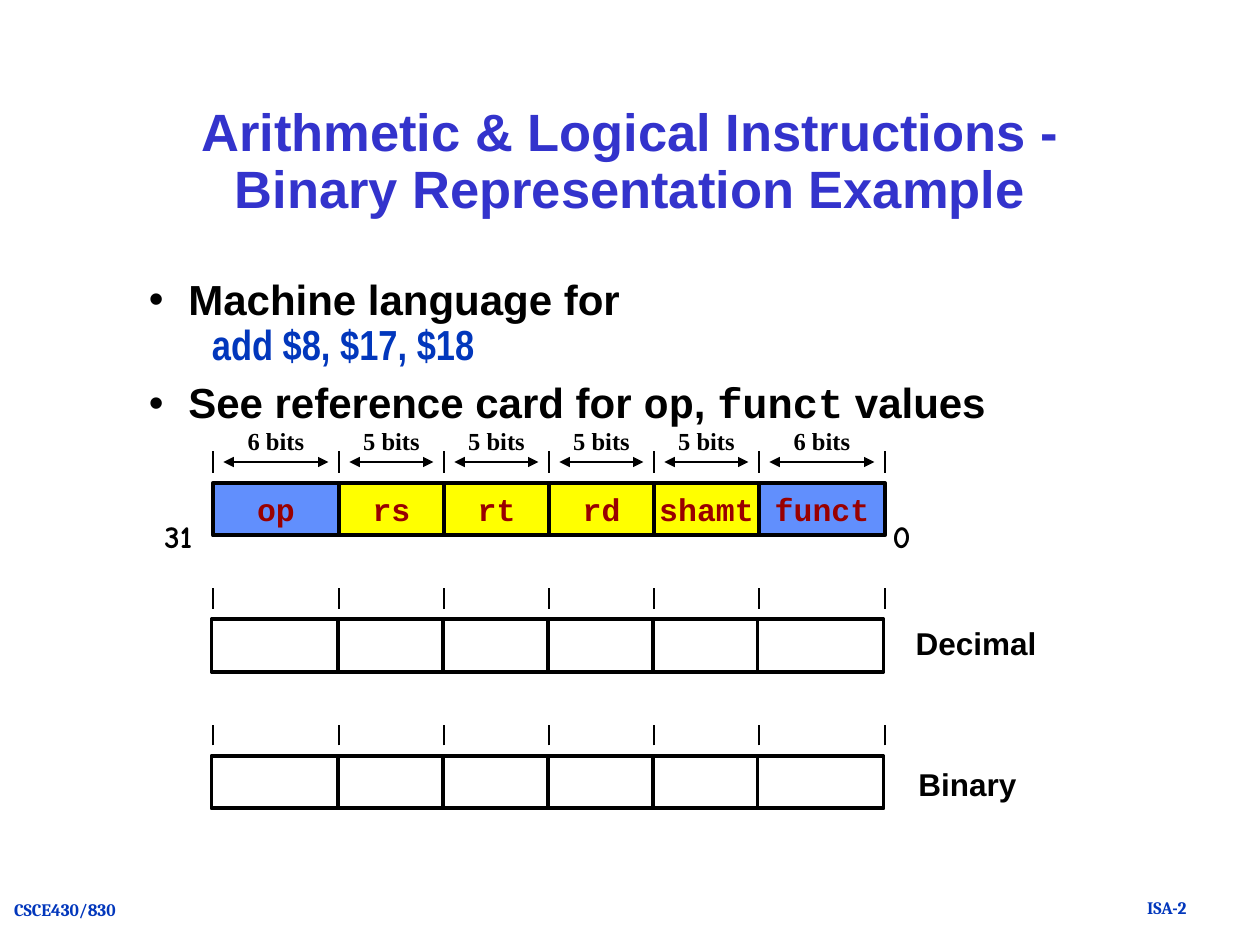
from itertools import accumulate

from lxml import etree
from pptx import Presentation
from pptx.dml.color import RGBColor
from pptx.enum.shapes import MSO_CONNECTOR as Connector, MSO_SHAPE as Shape
from pptx.enum.text import MSO_ANCHOR as Anchor, PP_ALIGN as Align
from pptx.oxml.ns import qn
from pptx.util import Pt

COLORS = {
    "black": "000000",
    "white": "FFFFFF",
    "title": "3333CC",
    "accent": "0237BC",
    "code": "990000",
    "blue": "618FFD",
    "yellow": "FFFF00",
}
# Field name, width in bits, fill
FIELDS = [
    ("op", 6, "blue"),
    ("rs", 5, "yellow"),
    ("rt", 5, "yellow"),
    ("rd", 5, "yellow"),
    ("shamt", 5, "yellow"),
    ("funct", 6, "blue"),
]
BIT_WIDTH = 12
EDGES = list(accumulate((bits * BIT_WIDTH for _, bits, _ in FIELDS), initial=0))
ROW_HEIGHT = 30
ROW_PITCH = 78


def color(name):
    return RGBColor.from_string(COLORS[name])


def style(run, font_name, size, color_name="black"):
    run.font.name = font_name
    run.font.size = Pt(size)
    run.font.bold = True
    run.font.color.rgb = color(color_name)


def add_text(slide, box, text, font_name, size, color_name="black",
             align=Align.CENTER, wrap=False):
    shape = slide.shapes.add_textbox(*map(Pt, box))
    frame = shape.text_frame
    frame.word_wrap = wrap
    frame.text = text
    paragraph = frame.paragraphs[0]
    paragraph.alignment = align
    for run in paragraph.runs:
        style(run, font_name, size, color_name)
    return shape


def add_line(slide, x1, y1, x2, y2, arrows=False):
    line = slide.shapes.add_connector(Connector.STRAIGHT, Pt(x1), Pt(y1), Pt(x2), Pt(y2))
    line.line.color.rgb = color("black")
    line.line.width = Pt(1)
    if arrows:
        outline = line.line._get_or_add_ln()
        for end in ("a:headEnd", "a:tailEnd"):
            etree.SubElement(outline, qn(end), type="triangle")
    etree.SubElement(line._element.spPr, qn("a:effectLst"))


def add_title(slide, box):
    shape = add_text(slide, box, "Arithmetic & Logical Instructions -\vBinary Representation Example",
                     "Arial", 30, "title", wrap=True)
    shape.text_frame.vertical_anchor = Anchor.MIDDLE
    shape.text_frame.paragraphs[0].line_spacing = 0.9


def add_bullets(slide, box):
    frame = slide.shapes.add_textbox(*map(Pt, box)).text_frame
    frame.word_wrap = True
    bullets = [
        [("Machine language for ", "Arial", "black"), None,
         ("\t", "Arial", "black"), ("add $8, $17, $18", "Arial Narrow", "accent")],
        [("See reference card for ", "Arial", "black"), ("op", "Courier New", "black"),
         (", ", "Arial", "black"), ("funct", "Courier New", "black"),
         (" values", "Arial", "black")],
    ]
    for index, parts in enumerate(bullets):
        paragraph = frame.add_paragraph() if index else frame.paragraphs[0]
        paragraph.line_spacing = 0.9
        paragraph.space_before = Pt(7.2)
        properties = paragraph._p.get_or_add_pPr()
        properties.set("marL", str(Pt(22.5)))
        properties.set("indent", str(Pt(-22.5)))
        etree.SubElement(properties, qn("a:buFont"), typeface="Arial")
        etree.SubElement(properties, qn("a:buChar"), char="•")
        for part in parts:
            if part is None:
                paragraph.add_line_break()
                continue
            text, font_name, color_name = part
            run = paragraph.add_run()
            run.text = text
            style(run, font_name, 24, color_name)


def add_ticks(slide, left, top):
    for edge in EDGES:
        add_line(slide, left + edge, top + 12, left + edge, top)


def add_cells(slide, left, top, filled):
    for (name, bits, fill), edge in zip(FIELDS, EDGES):
        cell = slide.shapes.add_shape(Shape.RECTANGLE, Pt(left + edge), Pt(top),
                                      Pt(bits * BIT_WIDTH), Pt(ROW_HEIGHT))
        cell.shadow.inherit = False
        cell.fill.solid()
        cell.fill.fore_color.rgb = color(fill if filled else "white")
        cell.line.color.rgb = color("black")
        cell.line.width = Pt(2.25)
        if filled:
            frame = cell.text_frame
            frame.word_wrap = False
            frame.vertical_anchor = Anchor.MIDDLE
            frame.text = name
            frame.paragraphs[0].alignment = Align.CENTER
            style(frame.paragraphs[0].runs[0], "Courier New", 18, "code")


def add_format_diagram(slide, left, top):
    # Named fields with their widths in bits
    add_cells(slide, left, top + 36, filled=True)
    add_ticks(slide, left, top + 18)
    for (_, bits, _), edge in zip(FIELDS, EDGES):
        x, width = left + edge, bits * BIT_WIDTH
        add_line(slide, x + 6, top + 24, x + width - 6, top + 24, arrows=True)
        add_text(slide, (x, top, width, 24), f"{bits} bits", "Times New Roman", 14)

    # Empty rows to fill in, set slightly left of the ticks
    for row in (1, 2):
        row_top = top + row * ROW_PITCH
        add_ticks(slide, left, row_top + 18)
        add_cells(slide, left - 0.8, row_top + 36, filled=False)

    # Row labels and bit numbers
    add_text(slide, (left + 394.5, top + 113, 83.5, 29), "Decimal", "Arial", 18, align=Align.LEFT)
    add_text(slide, (left + 396, top + 193.5, 70.5, 29), "Binary", "Arial", 18, align=Align.LEFT)
    add_text(slide, (left + 381, top + 51.6, 25, 29), "0", "Comic Neue", 18)
    add_text(slide, (left - 38, top + 51.6, 36.5, 29), "31", "Comic Neue", 18)


def add_footer(slide, top):
    add_text(slide, (646.5, top, 40.5, 19), "ISA-2", "Cambria", 10, "accent")
    add_text(slide, (0, top + 1, 74, 19), "CSCE430/830", "Cambria", 10, "accent")


def main():
    presentation = Presentation()
    presentation.slide_width = Pt(720)
    presentation.slide_height = Pt(540)
    slide = presentation.slides.add_slide(presentation.slide_layouts[6])
    add_footer(slide, 509)
    add_title(slide, (78, 48, 564, 90))
    add_bullets(slide, (78, 156, 564, 324))
    add_format_diagram(slide, 121.7, 240)
    presentation.save("out.pptx")


if __name__ == "__main__":
    main()
